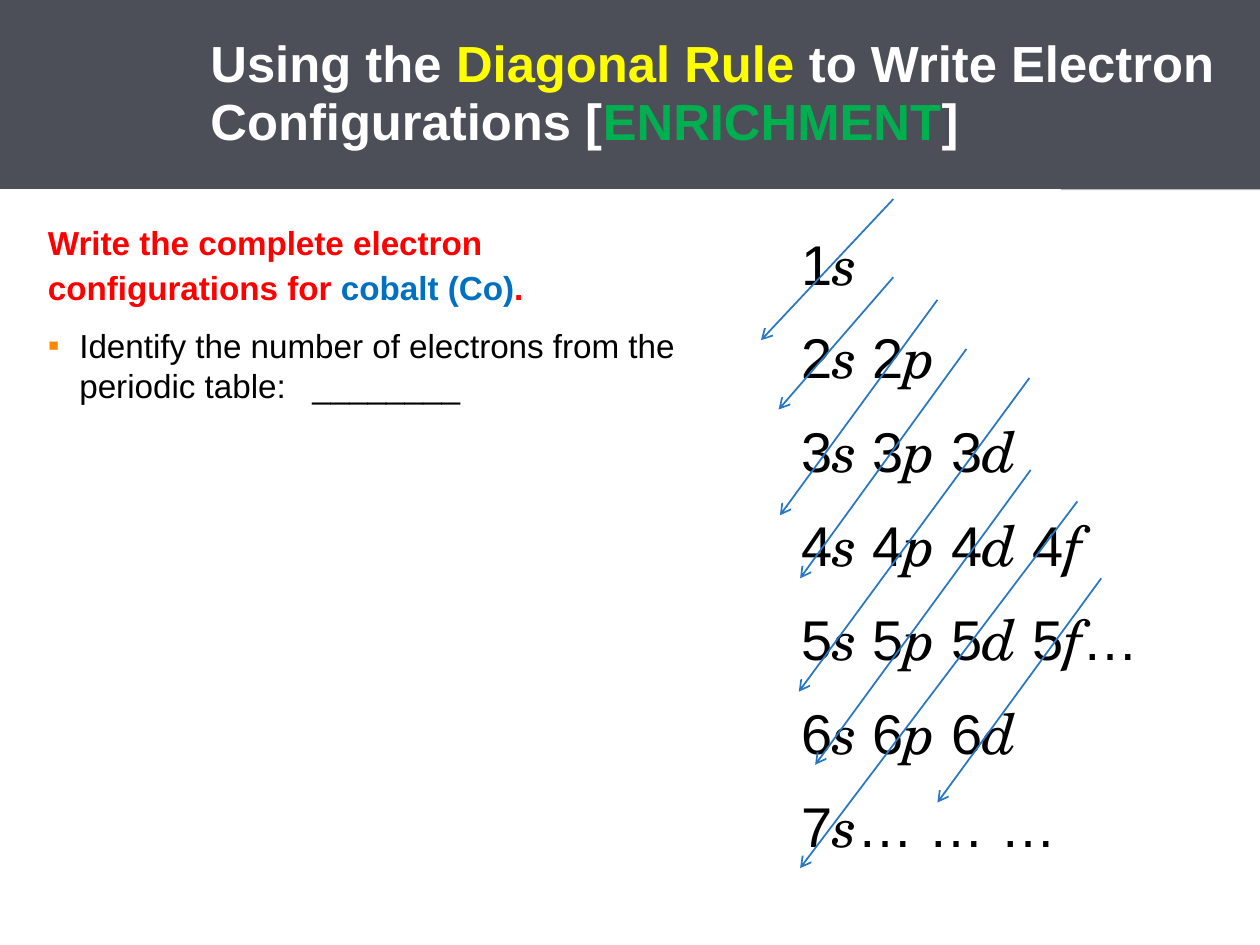
"""Build a slide on writing electron configurations with the diagonal rule."""
import itertools

import pptx
import pptx.dml.color
import pptx.enum.shapes
import pptx.enum.text
import pptx.oxml.ns
import pptx.util

Inches = pptx.util.Inches
Pt = pptx.util.Pt

COLORS = {
    "white": "FFFFFF", "black": "000000", "band": "4D4F58", "corner": "B5B7BF",
    "yellow": "FFFF00", "green": "00B050", "red": "FF0000", "blue": "0070C0",
    "bullet": "FE8900", "arrow": "2877C4",
}
ORBITALS = ["1s", "2s 2p", "3s 3p 3d", "4s 4p 4d 4f", "5s 5p 5d 5f…", "6s 6p 6d", "7s… … …"]
DIAGONALS = [
    (7.09, 1.58, 6.04, 2.7), (7.09, 2.2, 6.18, 3.25),
    (7.44, 2.38, 6.19, 4.09), (7.67, 2.77, 6.35, 4.59),
    (8.17, 3, 6.34, 5.49), (8.18, 3.73, 6.47, 6.07),
    (8.55, 3.98, 6.35, 6.89), (8.74, 4.59, 7.44, 6.37),
]


def rgb(name):
    """Return the named colour."""
    return pptx.dml.color.RGBColor.from_string(COLORS[name])


def add_xml(parent, tag, **attrs):
    """Append a drawing element to the parent and return it."""
    el = parent.makeelement(pptx.oxml.ns.qn(tag), attrs)
    parent.append(el)
    return el


class SlideBuilder:
    """Hold the style and the current slide."""

    def __init__(self, prs):
        """Start a title-only slide."""
        self.font = "Arial"
        self.orbital_font = "TeX Gyre Schola"
        self.slide = prs.slides.add_slide(prs.slide_layouts[5])

    def frame(self, sp, margins, anchor=pptx.enum.text.MSO_ANCHOR.TOP):
        """Format the text frame of a shape and return it."""
        tf = sp.text_frame
        values = {"word_wrap": True, "auto_size": pptx.enum.text.MSO_AUTO_SIZE.NONE,
                  "vertical_anchor": anchor}
        sides = ("margin_left", "margin_top", "margin_right", "margin_bottom")
        values.update(zip(sides, map(Inches, margins)))
        for key, value in values.items():
            setattr(tf, key, value)
        return tf

    def paragraph(self, p, runs, size, spacing=1.0, before=None, bold=False):
        """Fill a paragraph with (text, colour, font, italic) runs."""
        p.alignment = pptx.enum.text.PP_ALIGN.LEFT
        p.line_spacing = spacing
        if before is not None:
            p.space_before = Pt(before)
        for text, color, font, italic in runs:
            r = p.add_run()
            r.text = text
            values = {"name": font, "size": Pt(size), "bold": bold, "italic": italic}
            for key, value in values.items():
                setattr(r.font, key, value)
            r.font.color.rgb = rgb(color)

    def plain(self, *pairs):
        """Expand (text, colour) pairs to upright runs in the main font."""
        return [(text, color, self.font, False) for text, color in pairs]

    def indent(self, p, left, first=0):
        """Set the left margin and first-line indent of a paragraph."""
        pPr = p._p.get_or_add_pPr()
        pPr.set("marL", str(Inches(left)))
        pPr.set("indent", str(Inches(first)))
        return pPr

    def rectangle(self, left, top, width, height, color):
        """Add a plain filled rectangle."""
        sp = self.slide.shapes.add_shape(
            pptx.enum.shapes.MSO_SHAPE.RECTANGLE,
            *map(Inches, (left, top, width, height)))
        sp.shadow.inherit = False
        sp.fill.solid()
        sp.fill.fore_color.rgb = rgb(color)
        sp.line.fill.background()

    def textbox(self, left, top, width, height, margins):
        """Add a text box and return its text frame."""
        sp = self.slide.shapes.add_textbox(*map(Inches, (left, top, width, height)))
        return self.frame(sp, margins)

    def title(self, *pairs):
        """Place the title band in front of the shapes added so far."""
        sp = self.slide.shapes.title
        self.slide.shapes._spTree.append(sp._element)
        values = {"left": 0, "top": 0, "width": 10, "height": 1.5}
        for key, value in values.items():
            setattr(sp, key, Inches(value))
        sp.fill.solid()
        sp.fill.fore_color.rgb = rgb("band")
        tf = self.frame(sp, (0.36, 0.15, 0.36, 0.15), pptx.enum.text.MSO_ANCHOR.MIDDLE)
        p = tf.paragraphs[0]
        self.indent(p, 1.31)
        self.paragraph(p, self.plain(*pairs), 29, 0.95, bold=True)

    def task(self, heading, step):
        """Add the task heading with a bulleted step."""
        tf = self.textbox(0, 1.51, 5.42, 5.99, (0.38, 0.21, 0, 0.21))
        self.paragraph(tf.paragraphs[0], self.plain(*heading), 19, 1.13, bold=True)
        p = tf.add_paragraph()
        pPr = self.indent(p, 0.25, -0.25)
        add_xml(add_xml(pPr, "a:buClr"), "a:srgbClr", val=COLORS["bullet"])
        add_xml(pPr, "a:buFont", typeface=self.font)
        add_xml(pPr, "a:buChar", char="▪")
        add_xml(add_xml(pPr, "a:tabLst"), "a:tab", pos=str(Inches(2.1)), algn="l")
        self.paragraph(p, self.plain((step, "black")), 19, before=10.5)

    def orbitals(self, rows):
        """Add the orbital rows with their letters in italics."""
        tf = self.textbox(6.26, 1.69, 3.57, 5.19, (0.1, 0.05, 0.1, 0.05))
        for i, row in enumerate(rows):
            p = tf.add_paragraph() if i else tf.paragraphs[0]
            runs = [("".join(chars), "black", self.orbital_font if letter else self.font, letter)
                    for letter, chars in itertools.groupby(row, str.isalpha)]
            self.paragraph(p, runs, 32, 1.15, 9.4 if i else None)

    def arrow(self, *ends):
        """Add a thin arrow between two points."""
        sp = self.slide.shapes.add_connector(
            pptx.enum.shapes.MSO_CONNECTOR.STRAIGHT, *map(Inches, ends))
        sp.line.color.rgb = rgb("arrow")
        sp.line.width = Pt(1)
        add_xml(sp.line._get_or_add_ln(), "a:tailEnd", type="arrow")
        add_xml(sp._element.spPr, "a:effectLst")


def main():
    """Build and save the slide."""
    prs = pptx.Presentation()
    prs.slide_width = Inches(10)
    prs.slide_height = Inches(7.5)
    s = SlideBuilder(prs)
    s.rectangle(8.42, 0, 1.58, 1.51, "corner")
    s.task([("Write the complete electron configurations for ", "red"),
            ("cobalt (Co)", "blue"), (".", "red")],
           "Identify the number of electrons from the periodic table:\t________")
    s.title(("Using the ", "white"), ("Diagonal Rule ", "yellow"),
            ("to Write Electron Configurations [", "white"),
            ("ENRICHMENT", "green"), ("]", "white"))
    s.orbitals(ORBITALS)
    for ends in DIAGONALS:
        s.arrow(*ends)
    prs.save("out.pptx")


if __name__ == "__main__":
    main()
